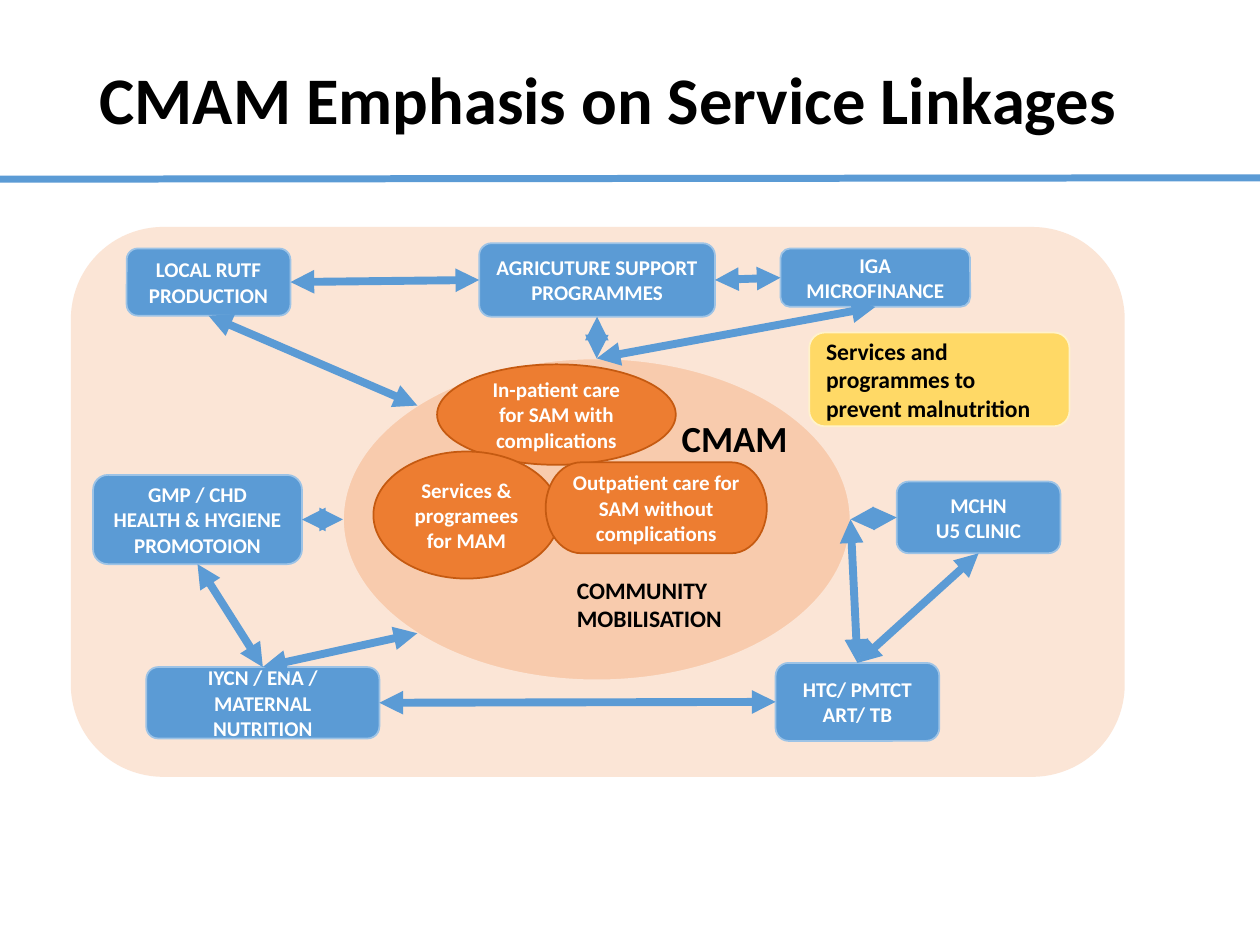
import math

import pptx
import pptx.dml.color
import pptx.enum.shapes
import pptx.enum.text
import pptx.oxml
import pptx.oxml.ns
import pptx.util

Pt = pptx.util.Pt
RGBColor = pptx.dml.color.RGBColor
SHAPE = pptx.enum.shapes.MSO_SHAPE
ALIGN = pptx.enum.text.PP_ALIGN
ANCHOR = pptx.enum.text.MSO_ANCHOR

FONT = "Calibri"
BLACK = RGBColor(0x00, 0x00, 0x00)
WHITE = RGBColor(0xFF, 0xFF, 0xFF)
BLUE = RGBColor(0x5B, 0x9B, 0xD5)
PALE_BLUE = RGBColor(0x9D, 0xC3, 0xE6)
ORANGE = RGBColor(0xED, 0x7D, 0x31)
DARK_ORANGE = RGBColor(0xC5, 0x5A, 0x11)
PEACH = RGBColor(0xF8, 0xCB, 0xAD)
PALE_PEACH = RGBColor(0xFB, 0xE5, 0xD6)
YELLOW = RGBColor(0xFF, 0xD9, 0x66)
PALE_YELLOW = RGBColor(0xFF, 0xF2, 0xCC)

# Content: every box is left, top, width, height in points
TITLE = "CMAM Emphasis on Service Linkages"
TITLE_BOX = (49.7, 28.8, 620.6, 59.8)
PANEL_BOX = (41, 130.2, 601.2, 313.2)
CMAM_BOX = (196, 204.8, 290, 184)

CARE_SERVICES = [
    ("In-patient care for SAM with complications",
     SHAPE.FLOWCHART_CONNECTOR, (249.8, 208.2, 136.4, 57.4)),
    ("Services & programees for MAM",
     SHAPE.FLOWCHART_CONNECTOR, (213.4, 258, 106.4, 72.6)),
    ("Outpatient care for SAM without complications",
     SHAPE.FLOWCHART_TERMINATOR, (311.8, 264.2, 126.4, 52)),
]

LINKED_SERVICES = {
    "RUTF": ("LOCAL RUTF PRODUCTION", (72.4, 142, 93.6, 38.4)),
    "IGA": ("IGA\nMICROFINANCE", (446, 142, 108.4, 33.4)),
    "Agriculture": ("AGRICUTURE SUPPORT PROGRAMMES", (273.8, 139, 134.8, 42)),
    "IYCN": ("IYCN / ENA / MATERNAL NUTRITION", (83.6, 381.2, 133.2, 40.8)),
    "HTC": ("HTC/ PMTCT\nART/ TB", (443.2, 378.8, 93.6, 44.6)),
    "MCHN": ("MCHN\nU5 CLINIC", (512.4, 275.2, 93.6, 41)),
    "GMP": ("GMP / CHD\nHEALTH & HYGIENE PROMOTOION", (53.2, 271.4, 119.4, 51)),
}

LABELS = [
    ("COMMUNITY MOBILISATION", 13.5, (322.6, 325.6, 104.4, 40.4)),
    ("CMAM", 21, (382.4, 234, 83.6, 32.4)),
]
PREVENTION = ("Services and programmes to prevent malnutrition",
              (462.4, 190, 148.8, 53.6))

# Connection sites: sides of a service box, angles on the CMAM ellipse
TOP, LEFT, BOTTOM, RIGHT = range(4)
LINKS = [
    (("RUTF", RIGHT), ("Agriculture", LEFT)),
    (("Agriculture", RIGHT), ("IGA", LEFT)),
    (("RUTF", BOTTOM), ("CMAM", 225)),
    (("IYCN", TOP), ("CMAM", 135)),
    (("CMAM", 0), ("HTC", TOP)),
    (("CMAM", 0), ("MCHN", LEFT)),
    (("GMP", RIGHT), ("CMAM", 180)),
    (("CMAM", 270), ("IGA", BOTTOM)),
    (("CMAM", 270), ("Agriculture", BOTTOM)),
    (("GMP", BOTTOM), ("IYCN", TOP)),
    (("IYCN", RIGHT), ("HTC", LEFT)),
    (("HTC", TOP), ("MCHN", BOTTOM)),
]


def write(frame, text, size, color, align=ALIGN.LEFT):
    frame.word_wrap = True
    frame.text = text
    for paragraph in frame.paragraphs:
        paragraph.alignment = align
        for run in paragraph.runs:
            run.font.name = FONT
            run.font.size = Pt(size)
            run.font.bold = True
            run.font.color.rgb = color


def add_block(kind, box, fill, outline):
    block = slide.shapes.add_shape(kind, *map(Pt, box))
    block.shadow.inherit = False
    block.fill.solid()
    block.fill.fore_color.rgb = fill
    block.line.color.rgb = outline
    block.line.width = Pt(1)
    block.text_frame.vertical_anchor = ANCHOR.MIDDLE
    return block


def add_line(start, end, width):
    line = slide.shapes.add_connector(
        pptx.enum.shapes.MSO_CONNECTOR.STRAIGHT, *map(Pt, start + end))
    line.line.color.rgb = BLUE
    line.line.width = Pt(width)
    properties = line.line._get_or_add_ln().getparent()
    properties.append(pptx.oxml.parse_xml(
        "<a:effectLst %s/>" % pptx.oxml.ns.nsdecls("a")))
    return line


def cmam_edge(degrees):
    left, top, width, height = CMAM_BOX
    angle = math.radians(degrees)
    return (left + width / 2 * (1 + math.cos(angle)),
            top + height / 2 * (1 + math.sin(angle)))


def site_point(name, site):
    if name == "CMAM":
        return cmam_edge(site)
    left, top, width, height = LINKED_SERVICES[name][1]
    return {
        TOP: (left + width / 2, top),
        LEFT: (left, top + height / 2),
        BOTTOM: (left + width / 2, top + height),
        RIGHT: (left + width, top + height / 2),
    }[site]


presentation = pptx.Presentation()
presentation.slide_width, presentation.slide_height = Pt(720), Pt(540)
slide = presentation.slides.add_slide(presentation.slide_layouts[5])

# Title and rule below it
title = slide.shapes.title
title.left, title.top, title.width, title.height = map(Pt, TITLE_BOX)
write(title.text_frame, TITLE, 38, BLACK)
title.text_frame.vertical_anchor = ANCHOR.MIDDLE
title.text_frame.paragraphs[0].line_spacing = 0.9
add_line((0, 102.4), (720, 101.6), 4)

# Background panel and CMAM ellipse
add_block(SHAPE.ROUNDED_RECTANGLE, PANEL_BOX, PALE_PEACH, PALE_PEACH)
add_block(SHAPE.OVAL, CMAM_BOX, PEACH, PALE_PEACH)

# Care services inside CMAM
for text, kind, box in CARE_SERVICES:
    care = add_block(kind, box, ORANGE, DARK_ORANGE)
    write(care.text_frame, text, 12, WHITE, ALIGN.CENTER)

# Linked services around CMAM
service_boxes = {}
for name, (text, box) in LINKED_SERVICES.items():
    service = add_block(SHAPE.ROUNDED_RECTANGLE, box, BLUE, PALE_BLUE)
    write(service.text_frame, text, 12, WHITE, ALIGN.CENTER)
    service_boxes[name] = service

# Labels on the ellipse
for text, size, box in LABELS:
    label = slide.shapes.add_textbox(*map(Pt, box))
    write(label.text_frame, text, size, BLACK)
    label.text_frame.auto_size = pptx.enum.text.MSO_AUTO_SIZE.SHAPE_TO_FIT_TEXT

# Two-way arrows, attached to the service boxes
for start, end in LINKS:
    link = add_line(site_point(*start), site_point(*end), 4.5)
    for tag in ("headEnd", "tailEnd"):
        link.line._get_or_add_ln().append(pptx.oxml.parse_xml(
            '<a:%s %s type="triangle"/>' % (tag, pptx.oxml.ns.nsdecls("a"))))
    for (name, site), attach in ((start, link.begin_connect),
                                 (end, link.end_connect)):
        if name in service_boxes:
            attach(service_boxes[name], site)

# Prevention note
text, box = PREVENTION
prevention = add_block(SHAPE.ROUNDED_RECTANGLE, box, YELLOW, PALE_YELLOW)
write(prevention.text_frame, text, 13.5, BLACK)

presentation.save("out.pptx")
